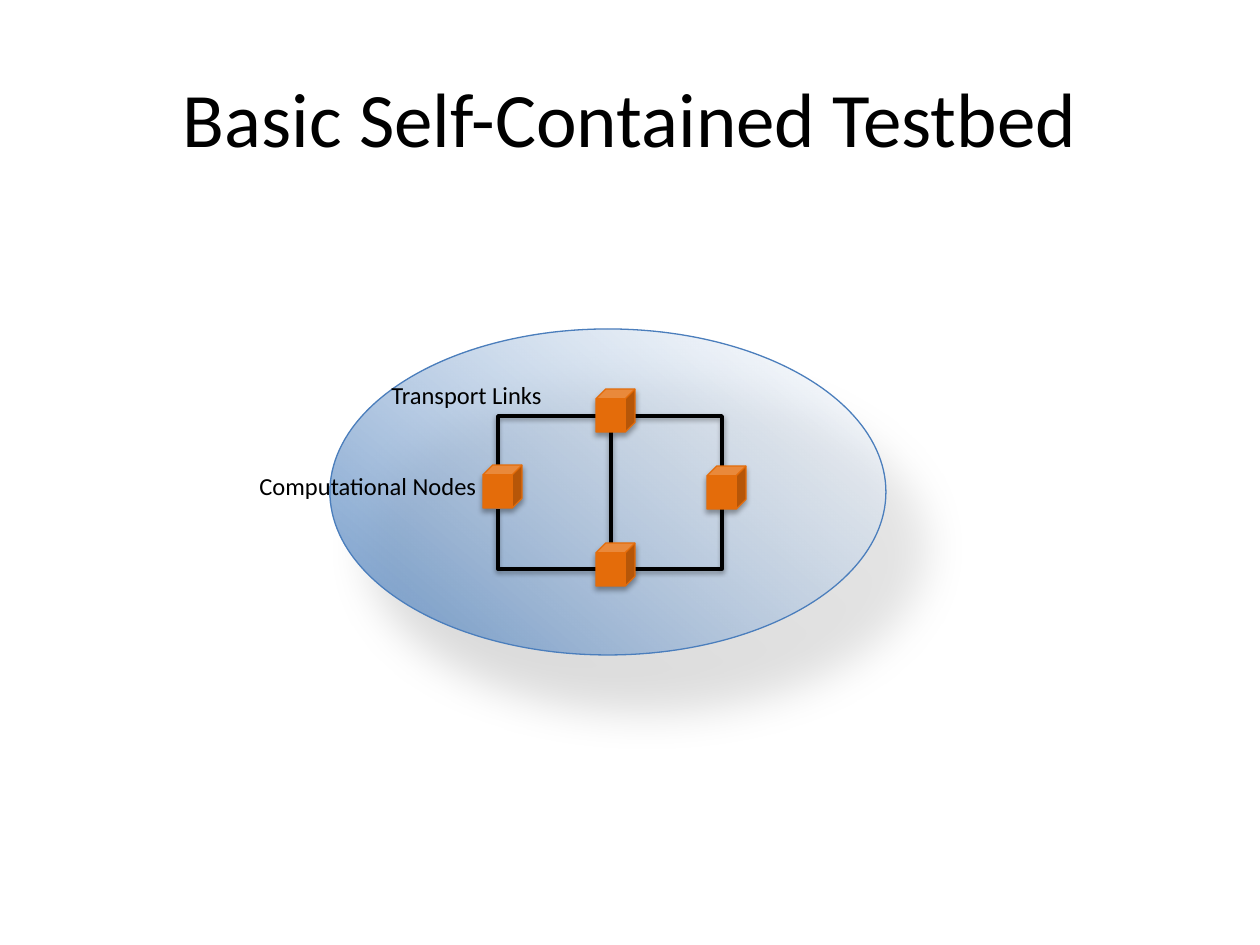
"""Build the slide of a self-contained testbed: four linked nodes inside a cloud."""
from dataclasses import dataclass
from typing import NamedTuple

from lxml.etree import SubElement
from pptx import Presentation
from pptx.dml.color import RGBColor as RGB
from pptx.enum.shapes import MSO_CONNECTOR as CONN, MSO_SHAPE as SHAPE
from pptx.enum.text import MSO_ANCHOR, MSO_AUTO_SIZE, PP_ALIGN
from pptx.oxml.ns import qn
from pptx.util import Emu, Pt

PX_PER_INCH = 126


class Shadow(NamedTuple):
    """Opacity in percent, blur and distance in points, direction in degrees."""
    opacity: int
    blur: float
    distance: float
    direction: int


class Box(NamedTuple):
    """Left, top, width and height in px."""
    x: int
    y: int
    w: int
    h: int


class Link(NamedTuple):
    """Start and end of a transport link in px; elbows leave sideways."""
    x1: int
    y1: int
    x2: int
    y2: int


class Label(NamedTuple):
    """Text and its box."""
    text: str
    box: Box


@dataclass(frozen=True)
class Theme:
    """Colours, type sizes, line widths and shadows."""
    font: str = "Calibri"
    ink: RGB = RGB(0, 0, 0)
    node: RGB = RGB(0xE4, 0x6C, 0x0A)
    cloud_line: RGB = RGB(0x4B, 0x7E, 0xBC)
    cloud_stops: tuple = ((RGB(0x4F, 0x81, 0xBD), 81), (RGB(255, 255, 255), 50))
    cloud_angle: int = 50
    title_size: int = 44
    label_size: int = 14
    outline: float = 0.75
    link_width: int = 2
    cloud_shadow: Shadow = Shadow(18, 25, 39, 55)
    link_shadow: Shadow = Shadow(38, 3.1, 1.6, 90)
    node_shadow: Shadow = Shadow(35, 3.1, 1.8, 90)


THEME = Theme()
TITLE = Label("Basic Self-Contained Testbed", Box(63, 38, 1134, 158))
CLOUD = Box(330, 329, 556, 326)
NODE_W, NODE_H = 39, 43
NODES = [(483, 465), (596, 389), (596, 543), (707, 466)]
ELBOWS = [Link(x1, y1, x2, y2)
          for y1, y2 in ((416, 475), (569, 509))
          for x1, x2 in ((596, 498), (625, 722))]
CENTRE_LINK = Link(611, 432, 611, 552)
LABELS = [Label("Transport Links", Box(379, 374, 179, 43)),
          Label("Computational Nodes", Box(247, 465, 244, 43))]


def px(n: int) -> Emu:
    """Turn px into EMU."""
    return Emu(round(n * 914400 / PX_PER_INCH))


def add_alpha(color, opacity: int) -> None:
    """Set the opacity of a colour element."""
    SubElement(color, qn("a:alpha"), val=str(opacity * 1000))


def add_shadow(sp, shadow: Shadow) -> None:
    """Give a finished shape or connector an outer shadow."""
    effects = SubElement(sp._element.spPr, qn("a:effectLst"))
    outer = SubElement(effects, qn("a:outerShdw"), blurRad=str(Pt(shadow.blur)),
                       dist=str(Pt(shadow.distance)), dir=str(shadow.direction * 60000),
                       algn="ctr", rotWithShape="0")
    add_alpha(SubElement(outer, qn("a:srgbClr"), val=str(THEME.ink)), shadow.opacity)


def set_line(sp, color: RGB, width: float) -> None:
    """Colour and size an outline or connector."""
    sp.line.color.rgb = color
    sp.line.width = Pt(width)


def write(tf, text: str, size: int) -> None:
    """Write one paragraph in the theme font."""
    p = tf.paragraphs[0]
    p.text = text
    p.font.name, p.font.size = THEME.font, Pt(size)
    p.font.color.rgb = THEME.ink


def set_title(s, title: Label) -> None:
    """Place and format the title placeholder."""
    sp = s.shapes.title
    sp.left, sp.top, sp.width, sp.height = map(px, title.box)
    sp.text_frame.vertical_anchor = MSO_ANCHOR.MIDDLE
    write(sp.text_frame, title.text, THEME.title_size)
    sp.text_frame.paragraphs[0].alignment = PP_ALIGN.CENTER


def add_cloud(s, box: Box) -> None:
    """Draw the translucent gradient ellipse."""
    sp = s.shapes.add_shape(SHAPE.OVAL, *map(px, box))
    sp.fill.gradient()
    sp.fill.gradient_angle = THEME.cloud_angle
    for stop, (color, _) in zip(sp.fill.gradient_stops, THEME.cloud_stops):
        stop.color.rgb = color
    colors = list(sp._element.spPr.iter(qn("a:srgbClr")))
    for color, (_, opacity) in zip(colors, THEME.cloud_stops):
        add_alpha(color, opacity)
    set_line(sp, THEME.cloud_line, THEME.outline)
    add_shadow(sp, THEME.cloud_shadow)


def add_link(s, link: Link, kind: CONN) -> None:
    """Draw a transport link, an elbow having a single bend."""
    sp = s.shapes.add_connector(kind, *map(px, link))
    if kind == CONN.ELBOW:
        sp._element.spPr.find(qn("a:prstGeom")).set("prst", "bentConnector2")
    set_line(sp, THEME.ink, THEME.link_width)
    add_shadow(sp, THEME.link_shadow)


def add_node(s, x: int, y: int) -> None:
    """Draw a computational node as a cube."""
    sp = s.shapes.add_shape(SHAPE.CUBE, *map(px, (x, y, NODE_W, NODE_H)))
    sp.fill.solid()
    sp.fill.fore_color.rgb = THEME.node
    set_line(sp, THEME.node, THEME.outline)
    add_shadow(sp, THEME.node_shadow)


def add_label(s, label: Label) -> None:
    """Write a label that does not wrap."""
    tf = s.shapes.add_textbox(*map(px, label.box)).text_frame
    tf.word_wrap = False
    tf.auto_size = MSO_AUTO_SIZE.SHAPE_TO_FIT_TEXT
    write(tf, label.text, THEME.label_size)


def main() -> None:
    """Build and save the slide."""
    prs = Presentation()
    prs.slide_width, prs.slide_height = px(1260), px(945)
    s = prs.slides.add_slide(prs.slide_layouts[5])
    set_title(s, TITLE)
    add_cloud(s, CLOUD)
    for link in ELBOWS:
        add_link(s, link, CONN.ELBOW)
    add_link(s, CENTRE_LINK, CONN.STRAIGHT)
    for x, y in NODES:
        add_node(s, x, y)
    for label in LABELS:
        add_label(s, label)
    prs.save("out.pptx")


if __name__ == "__main__":
    main()
